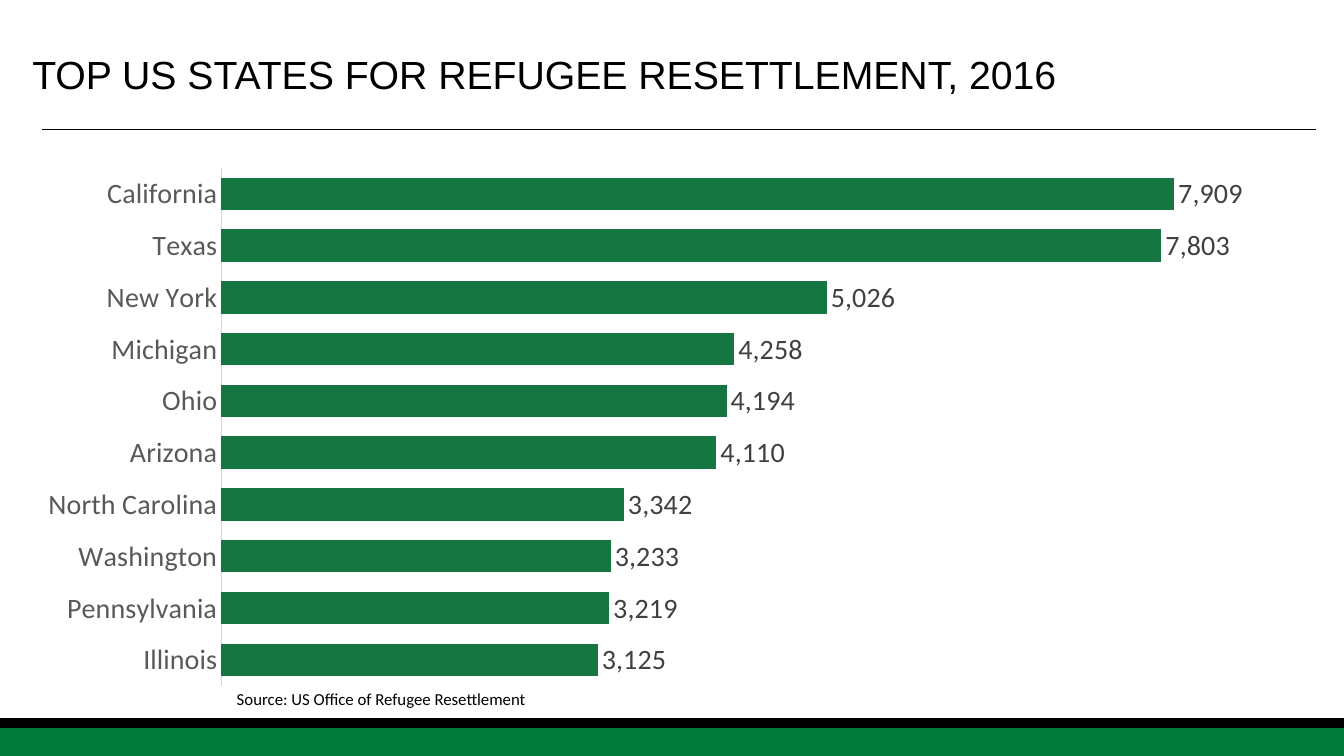
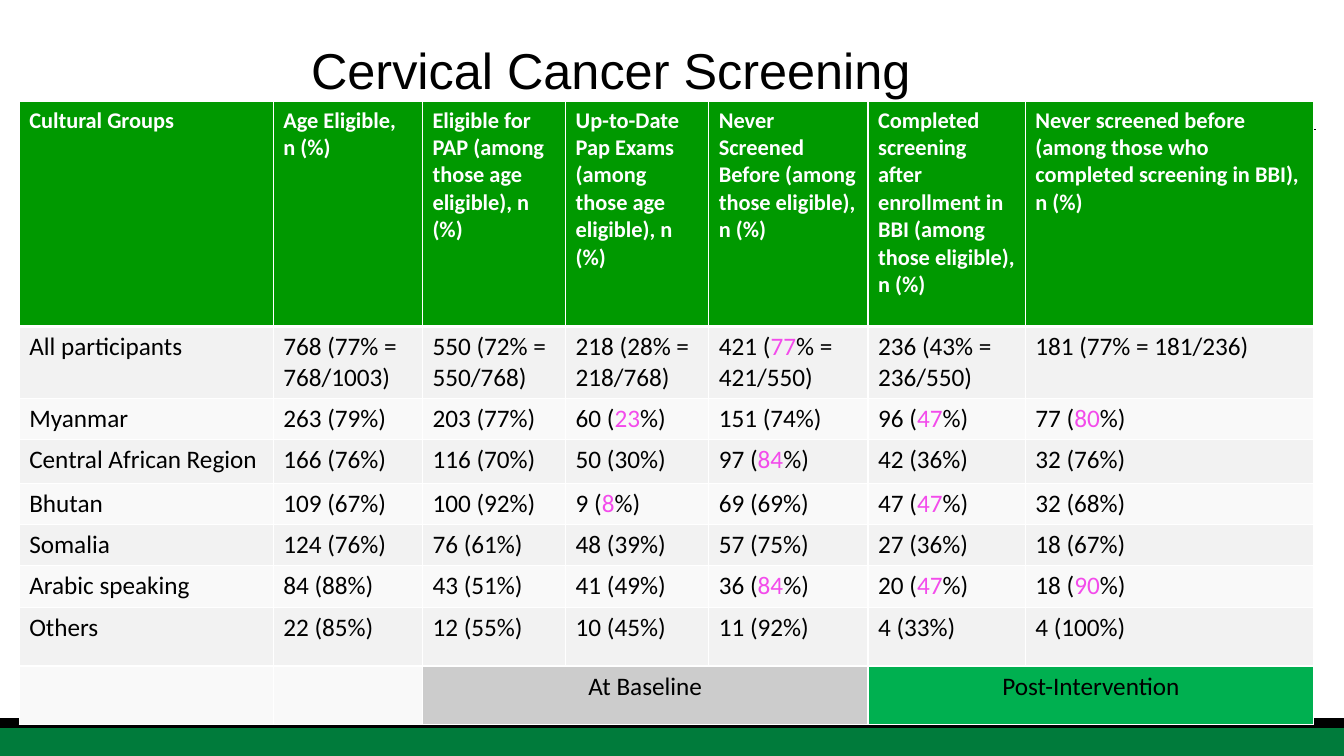
import pptx
import pptx.chart.data
import pptx.dml.color
import pptx.enum.chart
import pptx.enum.shapes
import pptx.enum.text
import pptx.oxml
import pptx.oxml.ns
import pptx.util
from lxml import etree

RGB = pptx.dml.color.RGBColor
BLACK = RGB(0x00, 0x00, 0x00)
WHITE = RGB(0xFF, 0xFF, 0xFF)
BAND_GREEN = RGB(0x00, 0x7B, 0x3B)
BAR_GREEN = RGB(0x16, 0x76, 0x41)
HEAD_GREEN = RGB(0x00, 0x99, 0x00)
POST_GREEN = RGB(0x00, 0xB0, 0x50)
BASE_GREY = RGB(0xCC, 0xCC, 0xCC)
STRIPES = RGB(0xF2, 0xF2, 0xF2), RGB(0xF9, 0xF9, 0xF9)
PINK = RGB(0xF3, 0x4B, 0xEB)
AXIS_TEXT = RGB(0x59, 0x59, 0x59)
AXIS_LINE = RGB(0xD9, 0xD9, 0xD9)
LABEL_TEXT = RGB(0x40, 0x40, 0x40)

HEAD_FONT, BODY_FONT = "Arial", "Calibri"
WIDTH, HEIGHT = pptx.util.Inches(13.33), pptx.util.Inches(7.5)
Pt = pptx.util.Pt
ALIGN = pptx.enum.text.PP_ALIGN
ANCHOR = pptx.enum.text.MSO_ANCHOR

STATES = {
    "Illinois": 3125, "Pennsylvania": 3219, "Washington": 3233,
    "North Carolina": 3342, "Arizona": 4110, "Ohio": 4194,
    "Michigan": 4258, "New York": 5026, "Texas": 7803, "California": 7909,
}

# Asterisks enclose the highlighted figures.
SCREENING = [
    ["Cultural Groups", "Age Eligible, n (%)",
     "Eligible for PAP (among those age eligible), n (%)",
     "Up-to-Date Pap Exams (among those age eligible), n (%)",
     "Never Screened Before (among those eligible), n (%)",
     "Completed screening after enrollment in BBI (among those eligible), n (%)",
     "Never screened before (among those who completed screening in BBI), n (%)"],
    ["All participants", "768 (77% = 768/1003)", "550 (72% = 550/768)",
     "218 (28% = 218/768)", "421 (*77*% = 421/550)", "236 (43% = 236/550)",
     "181 (77% = 181/236)"],
    ["Myanmar", "263 (79%)", "203 (77%)", "60 (*23*%)", "151 (74%)",
     "96 (*47*%)", "77 (*80*%)"],
    ["Central African Region", "166 (76%)", "116 (70%)", "50 (30%)",
     "97 (*84*%)", "42 (36%)", "32 (76%)"],
    ["Bhutan", "109 (67%)", "100 (92%)", "9 (*8*%)", "69 (69%)",
     "47 (*47*%)", "32 (68%)"],
    ["Somalia", "124 (76%)", "76 (61%)", "48 (39%)", "57 (75%)",
     "27 (36%)", "18 (67%)"],
    ["Arabic speaking", "84 (88%)", "43 (51%)", "41 (49%)", "36 (*84*%)",
     "20 (*47*%)", "18 (*90*%)"],
    ["Others", "22 (85%)", "12 (55%)", "10 (45%)", "11 (92%)", "4 (33%)",
     "4 (100%)"],
]
PHASES = [(2, 4, "At Baseline", BASE_GREY), (5, 6, "Post-Intervention", POST_GREEN)]
COLUMNS = [2.52, 1.48, 1.42, 1.42, 1.58, 1.56, 2.86]
ROWS = [2.23, 0.71, 0.39, 0.44, 0.4, 0.4, 0.42, 0.58, 0.58]


def area(left, top, width, height):
    """Turn percentages of the slide into a box in EMU."""
    return (int(WIDTH * left / 100), int(HEIGHT * top / 100),
            int(WIDTH * width / 100), int(HEIGHT * height / 100))


def write(tf, text, size, font=BODY_FONT, color=BLACK, bold=False,
          align=ALIGN.LEFT, anchor=ANCHOR.TOP, wrap=True):
    """Fill a text frame; parts between asterisks turn pink."""
    tf.word_wrap = wrap
    tf.auto_size = pptx.enum.text.MSO_AUTO_SIZE.NONE
    tf.vertical_anchor = anchor
    write_paragraph(tf.paragraphs[0], text, size, font, color, bold, align)


def write_paragraph(p, text, size, font=BODY_FONT, color=BLACK, bold=False,
                    align=ALIGN.LEFT):
    p.alignment = align
    for i, part in enumerate(text.split("*")):
        r = p.add_run()
        r.text = part
        r.font.name, r.font.size, r.font.bold = font, Pt(size), bold
        r.font.color.rgb = PINK if i % 2 else color


def add_band(s, box, color):
    sp = s.shapes.add_shape(pptx.enum.shapes.MSO_SHAPE.RECTANGLE, *box)
    sp.shadow.inherit = False
    sp.fill.solid()
    sp.fill.fore_color.rgb = color
    sp.line.color.rgb = color
    sp.line.width = Pt(1)


def add_framed_slide(prs, title, box, size, **style):
    """Add a slide with the shared rule, bottom bands and title style."""
    s = prs.slides.add_slide(prs.slide_layouts[5])
    left, top, width, _ = area(3.15, 17.07, 94.75, 0)
    rule = s.shapes.add_connector(pptx.enum.shapes.MSO_CONNECTOR.STRAIGHT,
                                  left, top, left + width, top)
    rule.line.color.rgb = BLACK
    rule.line.width = Pt(0.5)
    etree.SubElement(rule.element.spPr, pptx.oxml.ns.qn("a:effectLst"))
    add_band(s, area(0, 96.27, 100, 3.73), BAND_GREEN)
    add_band(s, area(0, 95.07, 100, 1.2), BLACK)
    sp = s.shapes.title
    sp.left, sp.top, sp.width, sp.height = box
    write(sp.text_frame, title, size, font=HEAD_FONT, anchor=ANCHOR.MIDDLE, **style)
    return s


def format_font(font, size, color):
    font.name, font.size, font.color.rgb = BODY_FONT, Pt(size), color


def add_state_chart(s, box):
    data = pptx.chart.data.CategoryChartData(number_format="#,##0")
    data.categories = list(STATES)
    data.add_series("Series 1", list(STATES.values()))
    kinds = pptx.enum.chart
    chart = s.shapes.add_chart(kinds.XL_CHART_TYPE.BAR_CLUSTERED, *box, data).chart
    format_font(chart.font, 10, BLACK)
    chart.has_legend = chart.has_title = False

    for axis, size in ((chart.category_axis, 20), (chart.value_axis, 9)):
        axis.major_tick_mark = axis.minor_tick_mark = kinds.XL_TICK_MARK.NONE
        format_font(axis.tick_labels.font, size, AXIS_TEXT)
    chart.category_axis.format.line.color.rgb = AXIS_LINE
    chart.category_axis.format.line.width = Pt(0.75)
    values = chart.value_axis
    values.minimum_scale, values.maximum_scale = 0, 9000
    values.tick_label_position = kinds.XL_TICK_LABEL_POSITION.NONE
    values.format.line.fill.background()
    values.major_gridlines.format.line.color.rgb = WHITE
    values.major_gridlines.format.line.width = Pt(0.75)

    plot = chart.plots[0]
    plot.gap_width = 60
    plot.vary_by_categories = False
    plot.has_data_labels = True
    labels = plot.data_labels
    labels.show_value = True
    labels.position = kinds.XL_LABEL_POSITION.OUTSIDE_END
    labels.number_format, labels.number_format_is_linked = "#,##0", False
    format_font(labels.font, 20, LABEL_TEXT)
    fill = plot.series[0].format.fill
    fill.solid()
    fill.fore_color.rgb = BAR_GREEN


def format_cell(cell, color, bottom=1):
    """Give a cell white borders and a plain fill."""
    tc_pr = cell._tc.get_or_add_tcPr()
    for side, width in (("L", 1), ("R", 1), ("T", 1), ("B", bottom)):
        tc_pr.append(pptx.oxml.parse_xml(
            f'<a:ln{side} {pptx.oxml.ns.nsdecls("a")} w="{Pt(width)}">'
            f'<a:solidFill><a:srgbClr val="{WHITE}"/></a:solidFill></a:ln{side}>'))
    cell.fill.solid()
    cell.fill.fore_color.rgb = color


def add_screening_table(s, box):
    _, _, width, height = box
    table = s.shapes.add_table(len(ROWS), len(COLUMNS), *box).table
    for column, share in zip(table.columns, COLUMNS):
        column.width = int(width * share / sum(COLUMNS))
    for row, share in zip(table.rows, ROWS):
        row.height = int(height * share / sum(ROWS))

    for i, row in enumerate(table.rows):
        for cell in row.cells:
            format_cell(cell, STRIPES[(i + 1) % 2] if i else HEAD_GREEN,
                        bottom=1 if i else 3)
    for i, texts in enumerate(SCREENING):
        style = {"size": 18} if i else {"size": 16, "color": WHITE, "bold": True}
        for j, text in enumerate(texts):
            write_paragraph(table.cell(i, j).text_frame.paragraphs[0], text, **style)

    last = len(ROWS) - 1
    for first, end, text, color in PHASES:
        cell = table.cell(last, first)
        cell.merge(table.cell(last, end))
        cell.fill.fore_color.rgb = color
        write_paragraph(cell.text_frame.paragraphs[0], text, 18, align=ALIGN.CENTER)
    for j in range(PHASES[0][0]):
        table.cell(last, j).text_frame.paragraphs[0].font.size = Pt(18)


def build_states_slide(prs):
    s = add_framed_slide(prs, "TOP US STATES FOR REFUGEE RESETTLEMENT, 2016",
                         area(1.65, 2.53, 97.45, 14.4), 28)
    add_state_chart(s, area(1.65, 20.8, 97.45, 71.33))
    source = s.shapes.add_textbox(*area(16.88, 90.4, 39.08, 4))
    write(source.text_frame, "Source: US Office of Refugee Resettlement", 12)


def build_screening_slide(prs):
    s = add_framed_slide(prs, "Cervical Cancer Screening",
                         area(22.2, 3.2, 46.5, 12), 36,
                         align=ALIGN.CENTER, wrap=False)
    add_screening_table(s, area(1.43, 13.47, 96.32, 82))


def main():
    prs = pptx.Presentation()
    prs.slide_width, prs.slide_height = WIDTH, HEIGHT
    build_states_slide(prs)
    build_screening_slide(prs)
    prs.save("out.pptx")


if __name__ == "__main__":
    main()
